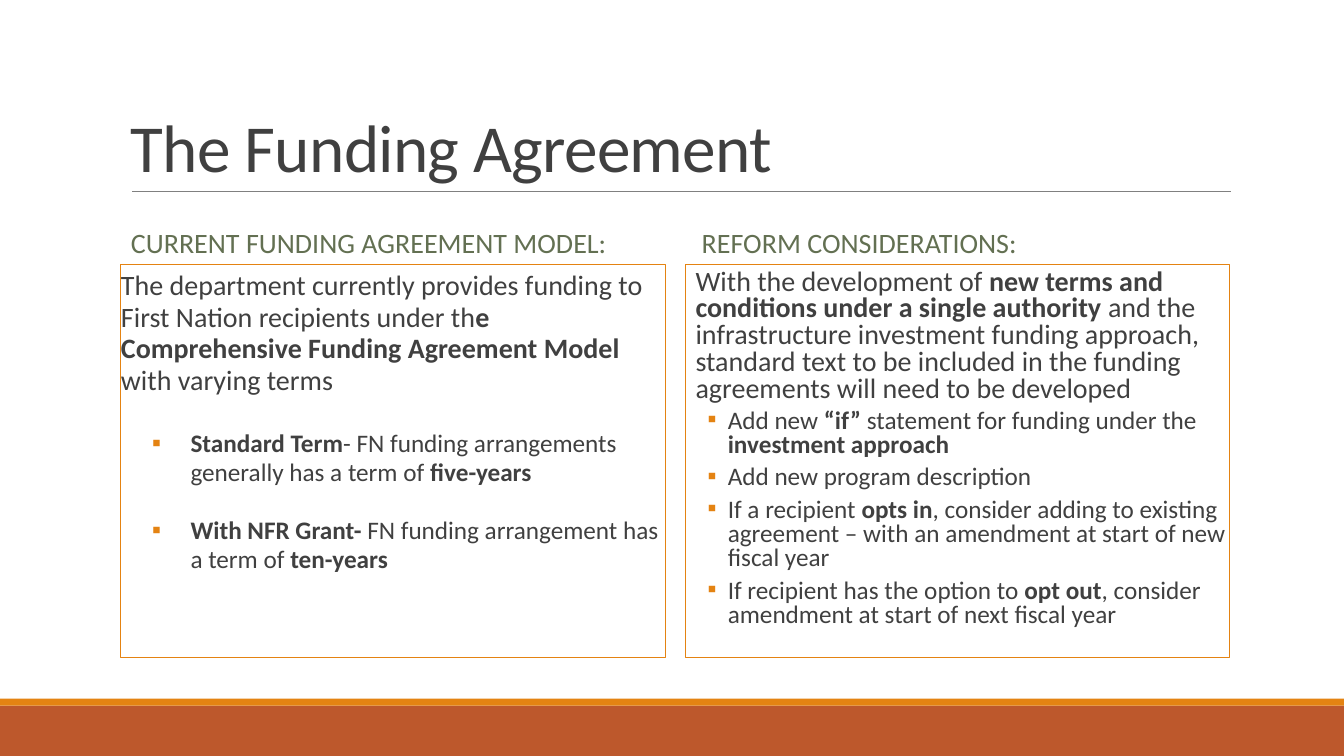
from dataclasses import dataclass

from lxml import etree
from pptx import Presentation
from pptx.dml.color import RGBColor
from pptx.enum.shapes import MSO_CONNECTOR, MSO_SHAPE
from pptx.enum.text import MSO_ANCHOR
from pptx.oxml.ns import qn
from pptx.util import Emu, Inches, Pt

RECT = MSO_SHAPE.RECTANGLE
STRAIGHT = MSO_CONNECTOR.STRAIGHT
TOP, MIDDLE, BOTTOM = MSO_ANCHOR.TOP, MSO_ANCHOR.MIDDLE, MSO_ANCHOR.BOTTOM


@dataclass(frozen=True)
class Theme:
    font: str = "Calibri"
    text: str = "404040"
    heading: str = "637052"
    accent: str = "E48312"
    footer: str = "BD582C"
    rule: str = "808080"
    title_pt: int = 48
    lead_pt: int = 20
    bullet_pt: int = 18


@dataclass(frozen=True)
class Box:
    """Left, top, width and height in percent of the slide."""
    x: float
    y: float
    w: float
    h: float


@dataclass(frozen=True)
class Para:
    """Runs alternate regular and bold, starting with regular."""
    runs: tuple[str, ...]
    size: int
    spacing: float
    before: float = 0
    after: float = 0
    margin: float = 0
    hang: float = 0
    bullet: str = ""


@dataclass(frozen=True)
class Panel:
    heading: str
    paras: tuple[Para, ...]


THEME = Theme()
LEFT, COL_W, GUTTER = 9, 40.5, 1.5
TITLE_Y, TITLE_H = 4.13, 21.2
HEAD_Y, HEAD_H = 26.93, 10.8
BODY_Y, BODY_H = 35, 52
RULE_Y, RULE_X, RULE_END = 25.33, 9.83, 91.58
BANDS = (
    (Box(0, 93.33, 100, 6.67), THEME.footer),
    (Box(0, 92.4, 100, 0.93), THEME.accent),
)


def wide_bullet(before: float, *runs: str) -> Para:
    return Para(runs, THEME.bullet_pt, 0.95, before, margin=0.69, hang=0.38, bullet="▪")


def tight_bullet(*runs: str) -> Para:
    return Para(runs, THEME.bullet_pt, 0.8, 2, 4, margin=0.42, hang=0.2, bullet="▪")


PANELS = (
    Panel("CURRENT FUNDING AGREEMENT MODEL:", (
        Para(("The department currently provides funding to First Nation recipients under th",
              "e Comprehensive Funding Agreement Model ", "with varying terms"),
             THEME.lead_pt, 0.95),
        wide_bullet(23, "", "Standard Term",
                    "- FN funding arrangements generally has a term of ", "five-years"),
        wide_bullet(21, "", "With NFR Grant- ",
                    "FN funding arrangement has a term of", " ten-years"),
    )),
    Panel(" REFORM CONSIDERATIONS:", (
        Para(("With the development of ", "new terms and conditions under a single authority ",
              "and the infrastructure investment funding approach, standard text to be "
              "included in the funding agreements will need to be developed"),
             THEME.lead_pt, 0.8, 12, 2, margin=0.1),
        tight_bullet("Add new ", "“if” ", "statement for funding under the ",
                     "investment approach"),
        tight_bullet("Add new program description"),
        tight_bullet("If a recipient ", "opts in", ", consider adding to existing agreement "
                     "– with an amendment at start of new fiscal year"),
        tight_bullet("If recipient has the option to ", "opt out",
                     ", consider amendment at start of next fiscal year"),
    )),
)

prs = Presentation()
prs.slide_width, prs.slide_height = Inches(13.33), Inches(7.5)
s = prs.slides.add_slide(prs.slide_layouts[6])


def px(share: float) -> Emu:
    return Emu(round(prs.slide_width * share / 100))


def py(share: float) -> Emu:
    return Emu(round(prs.slide_height * share / 100))


def rgb(colour: str) -> RGBColor:
    return RGBColor.from_string(colour)


def place(box: Box) -> tuple[Emu, Emu, Emu, Emu]:
    return px(box.x), py(box.y), px(box.w), py(box.h)


def add_rect(box: Box, fill: str = "", line: str = ""):
    sp = s.shapes.add_shape(RECT, *place(box))
    sp.shadow.inherit = False
    if fill:
        sp.fill.solid()
        sp.fill.fore_color.rgb = rgb(fill)
    else:
        sp.fill.background()
    if line:
        sp.line.color.rgb = rgb(line)
        sp.line.width = Pt(0.75)
    else:
        sp.line.fill.background()
    return sp


def add_rule() -> None:
    ln = s.shapes.add_connector(STRAIGHT, px(RULE_X), py(RULE_Y), px(RULE_END), py(RULE_Y))
    ln.line.color.rgb = rgb(THEME.rule)
    ln.line.width = Pt(0.5)
    etree.SubElement(ln._element.spPr, qn("a:effectLst"))


def set_indent(p, para: Para) -> None:
    pPr = p._p.get_or_add_pPr()
    pPr.set("algn", "l")
    pPr.set("marL", str(Inches(para.margin)))
    pPr.set("indent", str(-Inches(para.hang)))
    if para.bullet:
        clr = etree.SubElement(pPr, qn("a:buClr"))
        etree.SubElement(clr, qn("a:srgbClr"), val=THEME.accent)
        etree.SubElement(pPr, qn("a:buFont"), typeface=THEME.font)
        etree.SubElement(pPr, qn("a:buChar"), char=para.bullet)


def write(sp, paras: tuple[Para, ...], colour: str, anchor: MSO_ANCHOR,
          side: float = 0.1, tracking: int = 0) -> None:
    """Fill a shape with text; side is its left inset, tracking is in 1/100 pt."""
    tf = sp.text_frame
    tf.word_wrap = True
    tf.vertical_anchor = anchor
    tf.margin_left = tf.margin_right = Inches(side)
    tf.margin_top = tf.margin_bottom = Inches(0.05)
    for i, para in enumerate(paras):
        p = tf.add_paragraph() if i else tf.paragraphs[0]
        p.line_spacing = para.spacing
        p.space_before, p.space_after = Pt(para.before), Pt(para.after)
        set_indent(p, para)
        for n, text in enumerate(para.runs):
            if not text:
                continue
            r = p.add_run()
            r.text = text
            r.font.name, r.font.size = THEME.font, Pt(para.size)
            r.font.bold = n % 2 == 1
            r.font.color.rgb = rgb(colour)
            if tracking:
                r.font._element.set("spc", str(tracking))


def add_panel(panel: Panel, col: int) -> None:
    x = LEFT + col * (COL_W + GUTTER)
    head = s.shapes.add_textbox(*place(Box(x, HEAD_Y, COL_W, HEAD_H)))
    write(head, (Para((panel.heading,), THEME.lead_pt, 0.9, 12, 2),), THEME.heading, MIDDLE)
    body = add_rect(Box(x, BODY_Y, COL_W, BODY_H), line=THEME.accent)
    write(body, panel.paras, THEME.text, TOP, side=0)


def main() -> None:
    for box, fill in BANDS:
        add_rect(box, fill)
    add_rule()
    title = s.shapes.add_textbox(*place(Box(LEFT, TITLE_Y, 2 * COL_W + GUTTER, TITLE_H)))
    write(title, (Para(("The Funding Agreement",), THEME.title_pt, 0.85),),
          THEME.text, BOTTOM, tracking=-50)
    for col, panel in enumerate(PANELS):
        add_panel(panel, col)
    prs.save("out.pptx")


if __name__ == "__main__":
    main()
